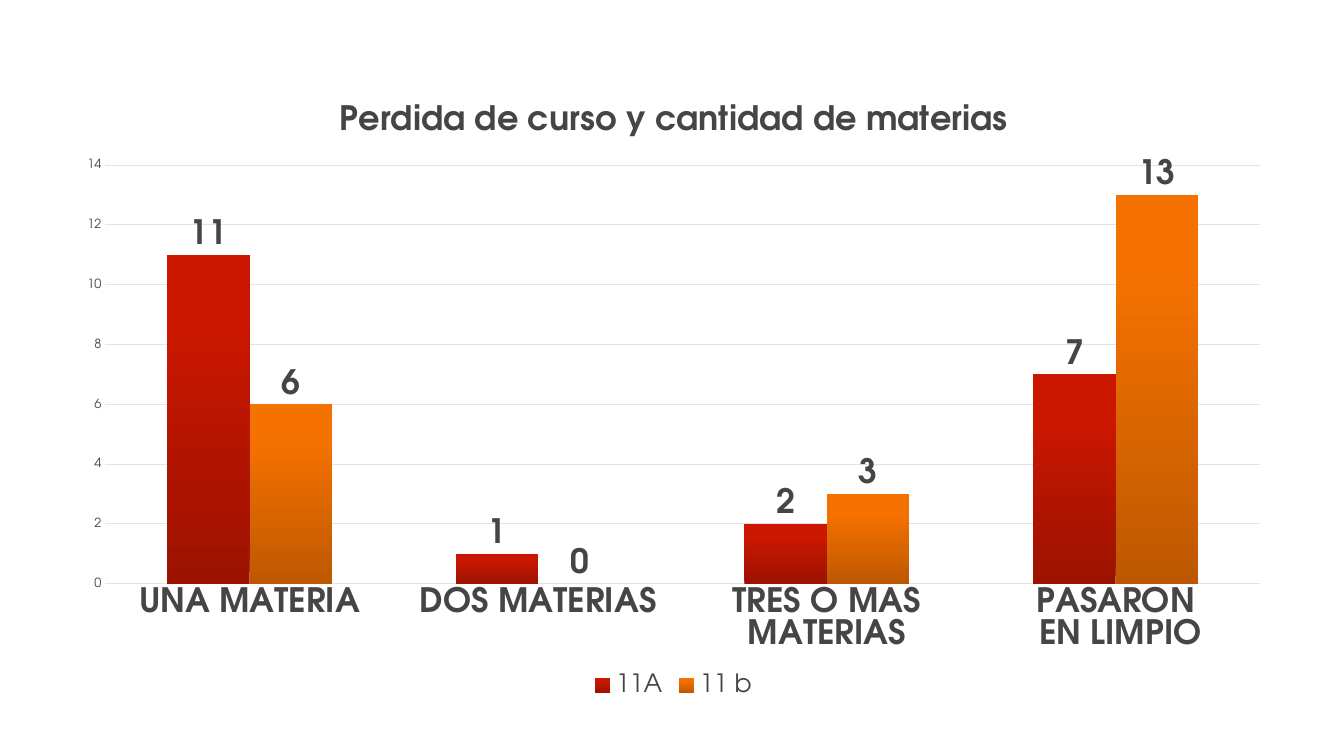
from lxml.etree import SubElement
from pptx import Presentation
from pptx.chart.data import CategoryChartData
from pptx.dml.color import RGBColor
from pptx.enum.chart import XL_CHART_TYPE, XL_LABEL_POSITION, XL_LEGEND_POSITION, XL_TICK_MARK
from pptx.oxml.ns import qn
from pptx.util import Inches, Pt

CATEGORIES = ["UNA MATERIA", "DOS MATERIAS", "TRES O MAS MATERIAS", "PASARON\n EN LIMPIO"]
COURSES = {
    "11A": {"values": (11, 1, 2, 7), "gradient": ("9C1200", "CB1700")},
    "11 b": {"values": (6, 0, 3, 13), "gradient": ("BD5800", "F57200")},
}
# Plot area as fractions of the chart frame
PLOT_LAYOUT = {"x": 0.035, "y": 0.14, "w": 0.945, "h": 0.67}


def color(hex_value):
    return RGBColor.from_string(hex_value)


def set_attributes(target, values):
    for name, value in values.items():
        setattr(target, name, value)


class SlideBuilder:
    font_name = "TeX Gyre Adventor"
    text_color = "454545"
    line_color = "E3E3E3"

    def __init__(self, presentation):
        self.slide = presentation.slides.add_slide(presentation.slide_layouts[6])

    def format_font(self, font, size, bold=False):
        set_attributes(font, {"name": self.font_name, "size": Pt(size), "bold": bold})
        font.color.rgb = color(self.text_color)

    def format_line(self, line):
        line.color.rgb = color(self.line_color)
        line.width = Pt(0.75)

    def add_column_chart(self, left, top, width, height, title, categories, courses):
        data = CategoryChartData()
        data.categories = categories
        for name, course in courses.items():
            data.add_series(name, course["values"])
        chart = self.slide.shapes.add_chart(
            XL_CHART_TYPE.COLUMN_CLUSTERED,
            Inches(left), Inches(top), Inches(width), Inches(height), data,
        ).chart
        self.format_font(chart.font, 10)
        self.add_title(chart, title)
        self.add_legend(chart)
        self.format_axes(chart)
        set_attributes(chart.plots[0], {"gap_width": 150, "overlap": 0, "vary_by_categories": False})
        for series, course in zip(chart.plots[0].series, courses.values()):
            self.format_series(series, course["gradient"])
        self.place_plot(chart)

    def add_title(self, chart, title):
        chart.has_title = True
        chart.chart_title.include_in_layout = False
        paragraph = chart.chart_title.text_frame.paragraphs[0]
        run = paragraph.add_run()
        run.text = title
        self.format_font(run.font, 24, bold=True)

    def add_legend(self, chart):
        chart.has_legend = True
        set_attributes(chart.legend, {"position": XL_LEGEND_POSITION.BOTTOM, "include_in_layout": False})
        self.format_font(chart.legend.font, 18)

    def format_axes(self, chart):
        ticks = {"major_tick_mark": XL_TICK_MARK.NONE, "minor_tick_mark": XL_TICK_MARK.NONE}
        category_axis, value_axis = chart.category_axis, chart.value_axis
        set_attributes(category_axis, ticks)
        set_attributes(value_axis, {
            **ticks, "minimum_scale": 0, "maximum_scale": 14, "major_unit": 2,
            "has_major_gridlines": True,
        })
        self.format_font(category_axis.tick_labels.font, 24, bold=True)
        self.format_font(value_axis.tick_labels.font, 9)
        self.format_line(category_axis.format.line)
        self.format_line(value_axis.major_gridlines.format.line)
        value_axis.format.line.fill.background()

    def format_series(self, series, gradient):
        """Fill the columns from dark at the foot to bright, and label them."""
        fill = series.format.fill
        fill.gradient()
        fill.gradient_angle = 90
        for stop, position, hex_value in zip(fill.gradient_stops, (0, 0.8), gradient):
            stop.position = position
            stop.color.rgb = color(hex_value)
        labels = series.data_labels
        set_attributes(labels, {"show_value": True, "position": XL_LABEL_POSITION.OUTSIDE_END})
        self.format_font(labels.font, 24, bold=True)

    def place_plot(self, chart):
        plot_area = chart.plots[0]._element.getparent()
        for layout in plot_area.findall(qn("c:layout")):
            plot_area.remove(layout)
        layout = SubElement(plot_area, qn("c:layout"))
        plot_area.insert(0, layout)
        manual = SubElement(layout, qn("c:manualLayout"))
        settings = {"layoutTarget": "inner", "xMode": "edge", "yMode": "edge", **PLOT_LAYOUT}
        for name, value in settings.items():
            SubElement(manual, qn(f"c:{name}")).set("val", str(value))


def main():
    presentation = Presentation()
    set_attributes(presentation, {"slide_width": Inches(13.33), "slide_height": Inches(7.5)})
    builder = SlideBuilder(presentation)
    builder.add_column_chart(
        0.62, 0.77, 12.12, 6.2, "Perdida de curso y cantidad de materias", CATEGORIES, COURSES
    )
    presentation.save("out.pptx")


if __name__ == "__main__":
    main()
